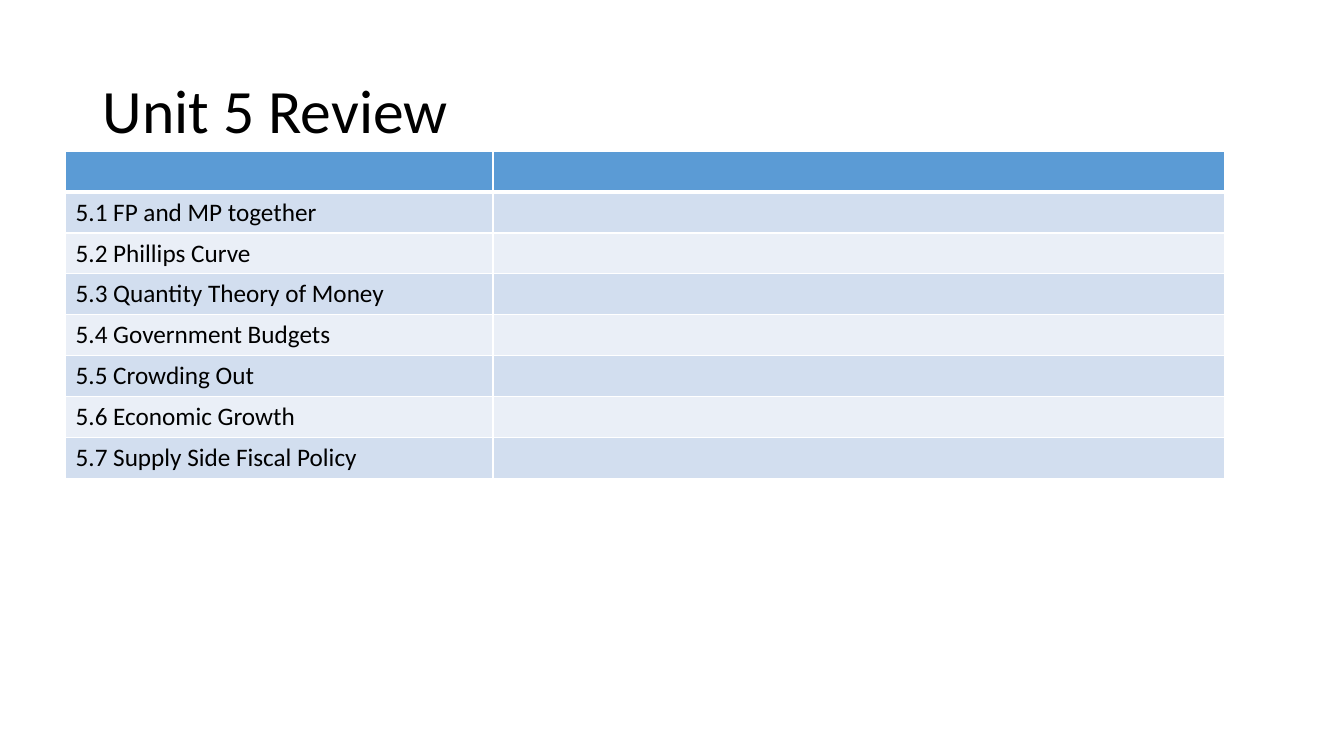
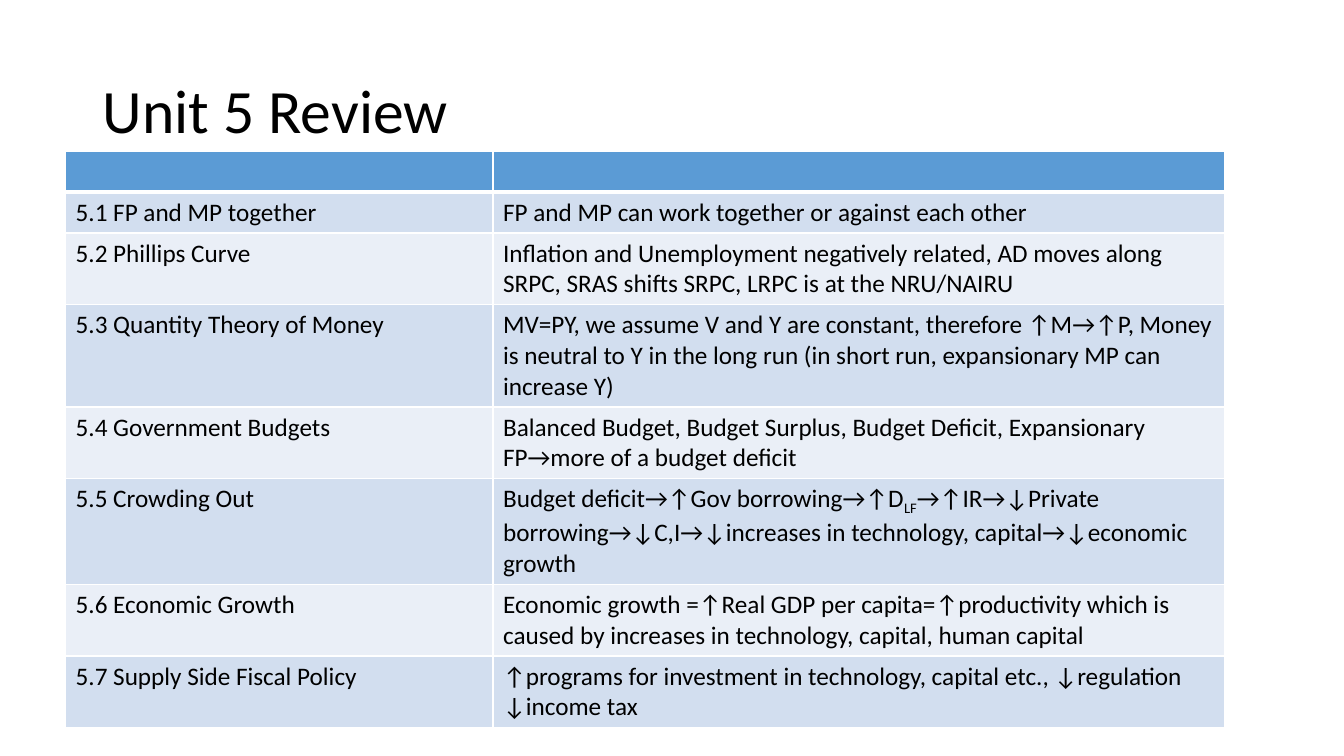
from dataclasses import dataclass

from lxml import etree
from pptx import Presentation
from pptx.dml.color import RGBColor
from pptx.enum.text import MSO_ANCHOR, PP_ALIGN
from pptx.oxml.ns import qn
from pptx.util import Inches, Pt

LEFT = PP_ALIGN.LEFT
MIDDLE = MSO_ANCHOR.MIDDLE
TITLE_ONLY = 5


@dataclass(frozen=True)
class Theme:
    font: str = "Calibri"
    title_size: int = 44
    body_size: int = 18
    text: str = "000000"
    header: str = "5B9BD5"
    bands: tuple = ("D2DEEF", "EAEFF7")
    rule: str = "FFFFFF"
    thin: int = 1
    thick: int = 3


@dataclass(frozen=True)
class Box:
    left: float
    top: float
    width: float
    height: float

    def lengths(self):
        return [Inches(side) for side in (self.left, self.top, self.width, self.height)]


THEME = Theme()
TITLE_BOX = Box(0.92, 0.4, 11.5, 1.45)
TABLE_BOX = Box(0.65, 1.5, 11.5, 3.24)
TOPIC_WIDTH = 4.24
SUBSCRIPT = "-25000"

TITLE = "Unit 5 Review"
TOPICS = [
    "5.1 FP and MP together",
    "5.2 Phillips Curve",
    "5.3 Quantity Theory of Money",
    "5.4 Government Budgets",
    "5.5 Crowding Out",
    "5.6 Economic Growth",
    "5.7 Supply Side Fiscal Policy",
]
BLANKS = [[] for _ in TOPICS]
ANSWERS = [
    ["FP and MP can work together or against each other"],
    ["Inflation and Unemployment negatively related, AD moves along SRPC, "
     "SRAS shifts SRPC, LRPC is at the NRU/NAIRU"],
    ["MV=PY, we assume V and Y are constant, therefore ↑M→↑P, Money is neutral "
     "to Y in the long run (in short run, expansionary MP can increase Y)"],
    ["Balanced Budget, Budget Surplus, Budget Deficit, Expansionary "
     "FP→more of a budget deficit"],
    ["Budget deficit→↑Gov borrowing→↑D",
     ("LF", SUBSCRIPT),
     "→↑IR→↓Private borrowing→↓C,I→↓increases in technology, "
     "capital→↓economic growth"],
    ["Economic growth =↑Real GDP per capita=↑productivity which is caused by "
     "increases in technology, capital, human capital"],
    ["↑programs for investment in technology, capital etc., "
     "↓regulation ↓income tax"],
]


def style_font(font, size):
    font.name = THEME.font
    font.size = Pt(size)
    font.color.rgb = RGBColor.from_string(THEME.text)


def add_run(para, content, size):
    text, baseline = content if isinstance(content, tuple) else (content, None)
    span = para.add_run()
    span.text = text
    style_font(span.font, size)
    if baseline:
        span.font._element.set("baseline", baseline)


def add_title(page, box, text):
    title = page.shapes.title
    title.left, title.top, title.width, title.height = box.lengths()
    title.text_frame.vertical_anchor = MIDDLE
    para = title.text_frame.paragraphs[0]
    para.alignment = LEFT
    para.line_spacing = 0.9
    add_run(para, text, THEME.title_size)


def set_borders(cell, top, bottom):
    properties = cell._tc.get_or_add_tcPr()
    sides = {"lnL": THEME.thin, "lnR": THEME.thin, "lnT": top, "lnB": bottom}
    for side, width in sides.items():
        line = etree.SubElement(properties, qn(f"a:{side}"), w=str(Pt(width)))
        fill = etree.SubElement(line, qn("a:solidFill"))
        etree.SubElement(fill, qn("a:srgbClr"), val=THEME.rule)


def fill_cell(cell, row, contents):
    set_borders(
        cell,
        top=THEME.thick if row == 1 else THEME.thin,
        bottom=THEME.thick if row == 0 else THEME.thin,
    )
    color = THEME.bands[(row - 1) % 2] if row else THEME.header
    cell.fill.solid()
    cell.fill.fore_color.rgb = RGBColor.from_string(color)
    para = cell.text_frame.paragraphs[0]
    style_font(para.font, THEME.body_size)
    for content in contents:
        add_run(para, content, THEME.body_size)


def add_review_table(page, box, answers):
    rows = [([], [])] + [([topic], answer) for topic, answer in zip(TOPICS, answers)]
    table = page.shapes.add_table(len(rows), 2, *box.lengths()).table
    table.columns[0].width = Inches(TOPIC_WIDTH)
    table.columns[1].width = Inches(box.width - TOPIC_WIDTH)
    for row, entries in enumerate(rows):
        for column, contents in enumerate(entries):
            fill_cell(table.cell(row, column), row, contents)


def add_review_slide(deck, answers):
    page = deck.slides.add_slide(deck.slide_layouts[TITLE_ONLY])
    add_title(page, TITLE_BOX, TITLE)
    add_review_table(page, TABLE_BOX, answers)


def main():
    deck = Presentation()
    deck.slide_width = Inches(13.33)
    deck.slide_height = Inches(7.5)
    for answers in (BLANKS, ANSWERS):
        add_review_slide(deck, answers)
    deck.save("out.pptx")


if __name__ == "__main__":
    main()
